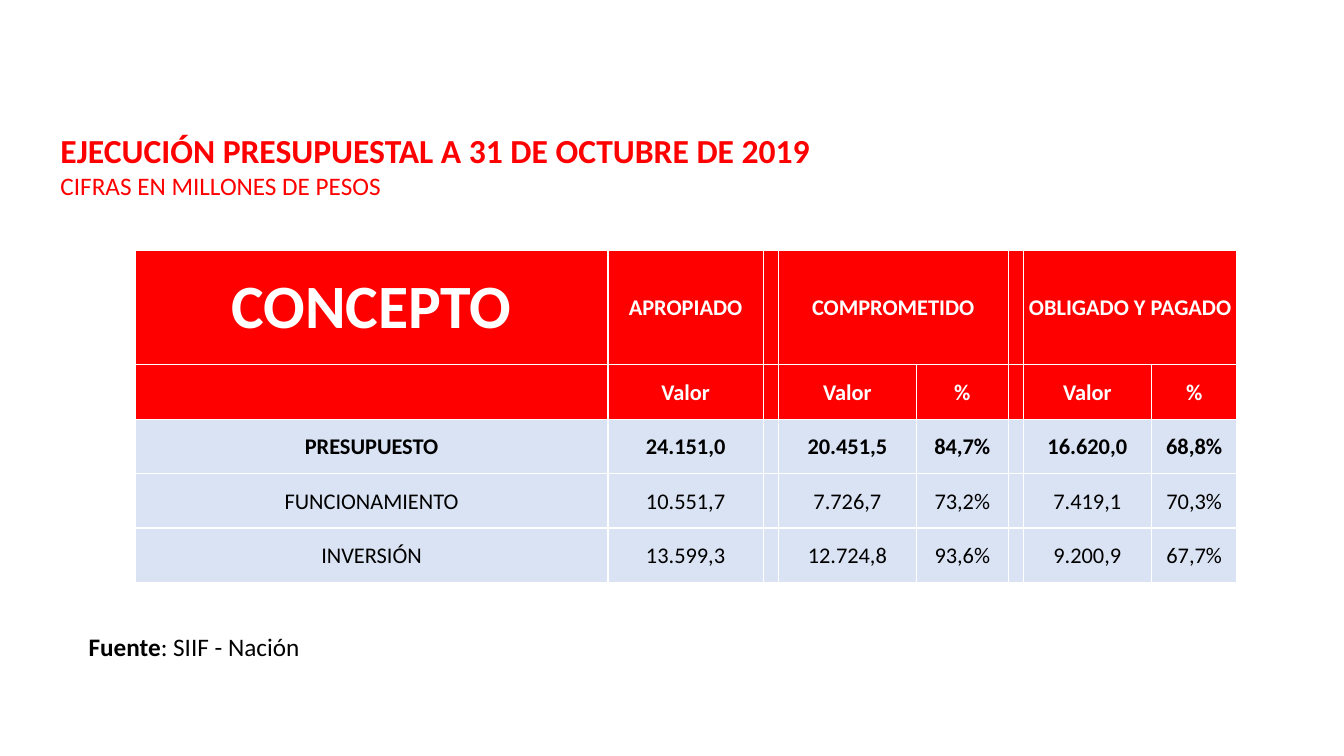
from dataclasses import dataclass

import lxml.etree
import pptx
import pptx.dml.color
import pptx.enum.text
import pptx.oxml.ns
import pptx.util
from pptx.util import Inches


@dataclass(frozen=True)
class Theme:
    font: str = "Calibri"
    red: str = "FF0000"
    pale_blue: str = "DAE3F3"
    white: str = "FFFFFF"
    black: str = "000000"
    title_size: int = 24
    body_size: int = 18
    concept_size: int = 44
    cell_size: int = 16
    border_width: int = 1


THEME = Theme()
COLUMN_WIDTHS = [4.69, 1.54, 0.15, 1.37, 0.91, 0.15, 1.27, 0.85]
ROW_HEIGHTS = [1.14] + [0.54] * 4
HEADER_ROWS = 2
LAST_BOLD_ROW = 2
MERGED_HEADER_COLUMNS = [3, 6]
BUDGET_ROWS = [
    ["CONCEPTO", "APROPIADO", "", "COMPROMETIDO", "", "", "OBLIGADO Y PAGADO", ""],
    ["", "Valor", "", "Valor", "%", "", "Valor", "%"],
    ["PRESUPUESTO", "24.151,0", "", "20.451,5", "84,7%", "", "16.620,0", "68,8%"],
    ["FUNCIONAMIENTO", "10.551,7", "", "7.726,7", "73,2%", "", "7.419,1", "70,3%"],
    ["INVERSIÓN", "13.599,3", "", "12.724,8", "93,6%", "", "9.200,9", "67,7%"],
]


def rgb(color):
    return pptx.dml.color.RGBColor.from_string(color)


def add_span(para, text, size, color, bold=False):
    span = para.add_run()
    span.text = text
    span.font.name = THEME.font
    span.font.size = pptx.util.Pt(size)
    span.font.bold = bold
    span.font.color.rgb = rgb(color)


def place(box, left, top, width, height):
    box.left, box.top = Inches(left), Inches(top)
    box.width, box.height = Inches(width), Inches(height)


def fill_title(page):
    box = page.shapes.title
    place(box, 0.5, 1.24, 11.04, 0.81)
    frame = box.text_frame
    frame.word_wrap = True
    frame.auto_size = pptx.enum.text.MSO_AUTO_SIZE.NONE
    frame.vertical_anchor = pptx.enum.text.MSO_ANCHOR.TOP
    heading, units = frame.paragraphs[0], frame.add_paragraph()
    heading.alignment = units.alignment = pptx.enum.text.PP_ALIGN.LEFT
    add_span(heading, "EJECUCIÓN PRESUPUESTAL A 31 DE OCTUBRE DE 2019",
             THEME.title_size, THEME.red, bold=True)
    add_span(units, "CIFRAS EN MILLONES DE PESOS", THEME.body_size, THEME.red)


def add_borders(cell):
    properties = cell._tc.get_or_add_tcPr()
    for side in ("lnL", "lnR", "lnT", "lnB"):
        line = lxml.etree.SubElement(properties, pptx.oxml.ns.qn(f"a:{side}"),
                                     w=str(pptx.util.Pt(THEME.border_width)))
        fill = lxml.etree.SubElement(line, pptx.oxml.ns.qn("a:solidFill"))
        lxml.etree.SubElement(fill, pptx.oxml.ns.qn("a:srgbClr"), val=THEME.white)


def format_cell(cell, text, fill, size, color, bold):
    add_borders(cell)
    cell.fill.solid()
    cell.fill.fore_color.rgb = rgb(fill)
    cell.vertical_anchor = pptx.enum.text.MSO_ANCHOR.MIDDLE
    cell.margin_left = cell.margin_right = cell.margin_top = Inches(0.01)
    cell.margin_bottom = 0
    para = cell.text_frame.paragraphs[0]
    para.alignment = pptx.enum.text.PP_ALIGN.CENTER
    if text:
        add_span(para, text, size, color, bold)


def add_budget_table(page):
    table = page.shapes.add_table(
        len(ROW_HEIGHTS), len(COLUMN_WIDTHS), Inches(1.34), Inches(2.48),
        Inches(sum(COLUMN_WIDTHS)), Inches(sum(ROW_HEIGHTS))).table
    for column, width in zip(table.columns, COLUMN_WIDTHS):
        column.width = Inches(width)
    for row, height in zip(table.rows, ROW_HEIGHTS):
        row.height = Inches(height)
    for first in MERGED_HEADER_COLUMNS:
        table.cell(0, first).merge(table.cell(0, first + 1))
    for row, texts in enumerate(BUDGET_ROWS):
        header = row < HEADER_ROWS
        fill = THEME.red if header else THEME.pale_blue
        color = THEME.white if header else THEME.black
        for column, text in enumerate(texts):
            size = THEME.concept_size if row == column == 0 else THEME.cell_size
            format_cell(table.cell(row, column), text, fill, size, color,
                        bold=row <= LAST_BOLD_ROW)


def add_source_note(page):
    box = page.shapes.add_textbox(Inches(0.78), Inches(6.21), Inches(2.29), Inches(0.4))
    box.text_frame.word_wrap = False
    para = box.text_frame.paragraphs[0]
    add_span(para, "Fuente", THEME.body_size, THEME.black, bold=True)
    add_span(para, ": SIIF - Nación", THEME.body_size, THEME.black)


def main():
    deck = pptx.Presentation()
    deck.slide_width, deck.slide_height = Inches(13.33), Inches(7.5)
    page = deck.slides.add_slide(deck.slide_layouts.get_by_name("Title Only"))
    fill_title(page)
    add_budget_table(page)
    add_source_note(page)
    deck.save("out.pptx")


if __name__ == "__main__":
    main()
